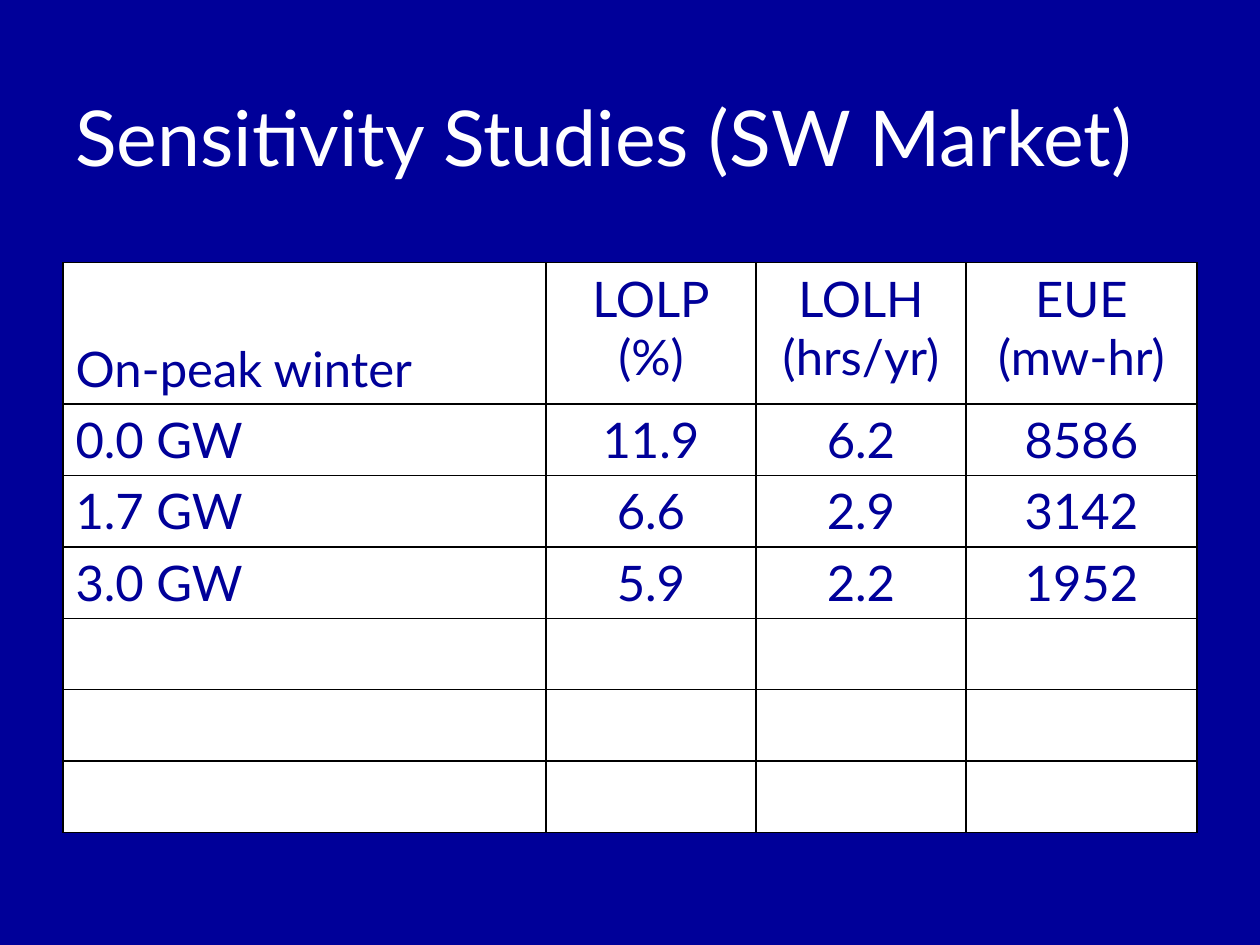
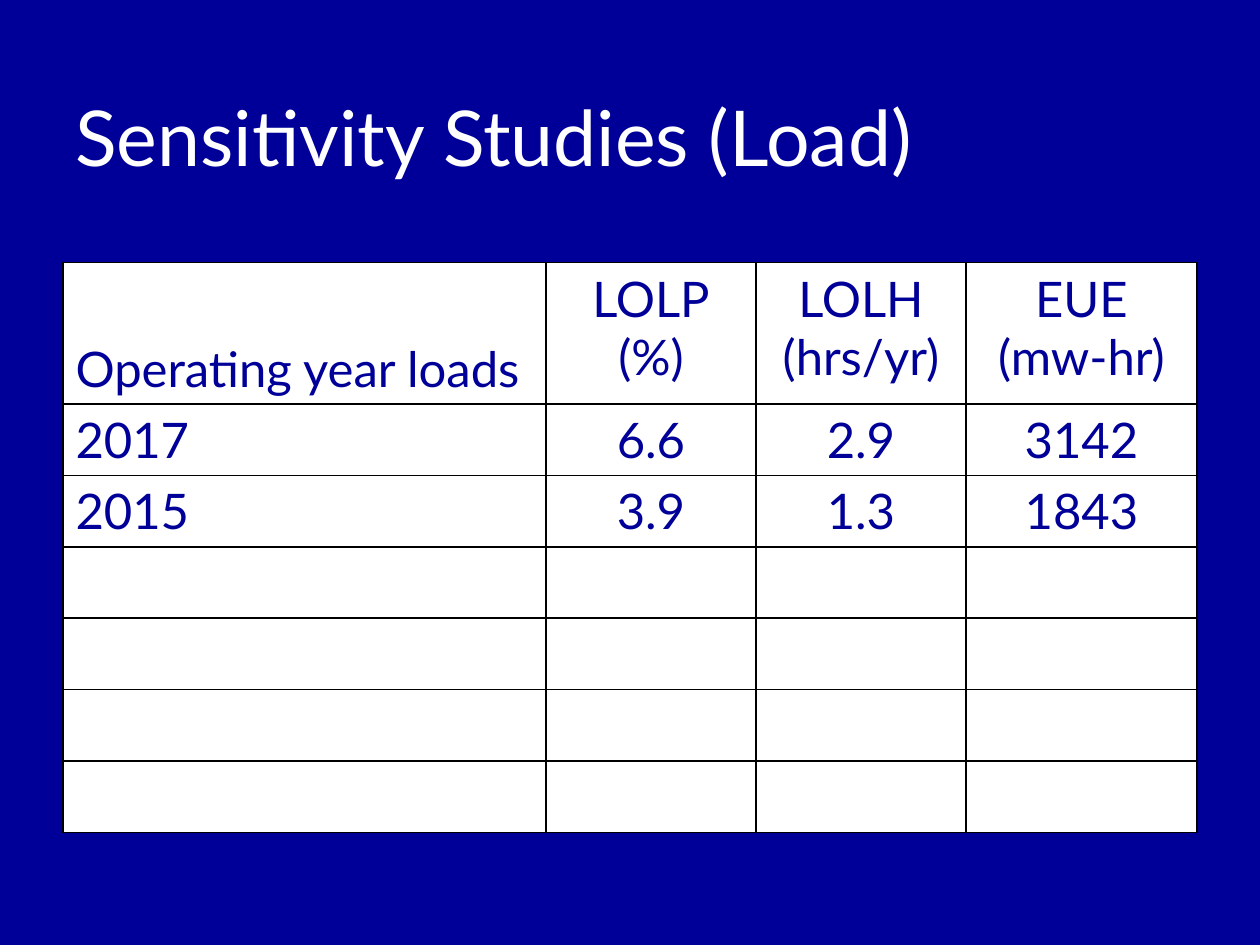
from dataclasses import dataclass

from lxml import etree
from pptx import Presentation
from pptx.dml.color import RGBColor
from pptx.enum.text import MSO_ANCHOR, PP_ALIGN
from pptx.oxml.ns import qn
from pptx.util import Pt

LEFT, CENTER = PP_ALIGN.LEFT, PP_ALIGN.CENTER
TOP, MIDDLE, BOTTOM = MSO_ANCHOR.TOP, MSO_ANCHOR.MIDDLE, MSO_ANCHOR.BOTTOM

# Content
MEASURES = ("LOLP\n(%)", "LOLH\n(hrs/yr)", "EUE\n(mw-hr)")
STUDIES = [
    {
        "title": "Sensitivity Studies (SW Market)",
        "case": "On-peak winter",
        "results": [
            ("0.0 GW", "11.9", "6.2", "8586"),
            ("1.7 GW", "6.6", "2.9", "3142"),
            ("3.0 GW", "5.9", "2.2", "1952"),
        ],
    },
    {
        "title": "Sensitivity Studies (Load)",
        "case": "Operating year loads",
        "results": [
            ("2017", "6.6", "2.9", "3142"),
            ("2015", "3.9", "1.3", "1843"),
        ],
    },
]


@dataclass(frozen=True)
class Theme:
    navy: str = "000099"
    white: str = "FFFFFF"
    black: str = "000000"
    font: str = "Lato"
    title_size: int = 44
    table_size: int = 28
    border: int = 1


THEME = Theme()

# Layout, in points
SLIDE_WIDTH, SLIDE_HEIGHT = 720, 540
MARGIN = 36
TITLE_TOP, TITLE_HEIGHT = 23, 109
TABLE_TOP = 150
COLUMN_WIDTHS = (276, 120, 120, 132)
HEADER_HEIGHT, ROW_HEIGHT = 80.8, 40.8
RESULT_ROWS = 6


def write_text(frame, text, *, size, color, align=LEFT):
    paragraph = frame.paragraphs[0]
    paragraph.text = text
    paragraph.alignment = align
    for run in paragraph.runs:
        run.font.name = THEME.font
        run.font.size = Pt(size)
        run.font.color.rgb = RGBColor.from_string(color)


def add_borders(cell):
    properties = cell._tc.get_or_add_tcPr()
    for side in ("a:lnL", "a:lnR", "a:lnT", "a:lnB"):
        line = etree.SubElement(properties, qn(side), w=str(Pt(THEME.border)))
        fill = etree.SubElement(line, qn("a:solidFill"))
        etree.SubElement(fill, qn("a:srgbClr"), val=THEME.black)


def add_title(slide, text):
    box = slide.shapes.add_textbox(
        Pt(MARGIN), Pt(TITLE_TOP), Pt(SLIDE_WIDTH - 2 * MARGIN), Pt(TITLE_HEIGHT)
    )
    box.text_frame.word_wrap = True
    box.text_frame.vertical_anchor = MIDDLE
    write_text(box.text_frame, text, size=THEME.title_size, color=THEME.white)


def add_results_table(slide, case, results):
    heights = [HEADER_HEIGHT] + [ROW_HEIGHT] * RESULT_ROWS
    table = slide.shapes.add_table(
        len(heights), len(COLUMN_WIDTHS), Pt(MARGIN), Pt(TABLE_TOP),
        Pt(sum(COLUMN_WIDTHS)), Pt(sum(heights)),
    ).table
    table.first_row = table.horz_banding = False
    for column, width in zip(table.columns, COLUMN_WIDTHS):
        column.width = Pt(width)
    for row, height in zip(table.rows, heights):
        row.height = Pt(height)

    # Every cell is ruled and white, including the unused rows
    for cell in table.iter_cells():
        add_borders(cell)
        cell.fill.solid()
        cell.fill.fore_color.rgb = RGBColor.from_string(THEME.white)

    # Case names on the left, measures centred
    for row_index, values in enumerate([(case, *MEASURES), *results]):
        for column_index, value in enumerate(values):
            cell = table.cell(row_index, column_index)
            cell.vertical_anchor = TOP
            write_text(cell.text_frame, value, size=THEME.table_size,
                       color=THEME.navy, align=CENTER if column_index else LEFT)
    table.cell(0, 0).vertical_anchor = BOTTOM


def main():
    presentation = Presentation()
    presentation.slide_width = Pt(SLIDE_WIDTH)
    presentation.slide_height = Pt(SLIDE_HEIGHT)
    blank = presentation.slide_layouts[6]
    for study in STUDIES:
        slide = presentation.slides.add_slide(blank)
        slide.background.fill.solid()
        slide.background.fill.fore_color.rgb = RGBColor.from_string(THEME.navy)
        add_title(slide, study["title"])
        add_results_table(slide, study["case"], study["results"])
    presentation.save("out.pptx")


if __name__ == "__main__":
    main()
